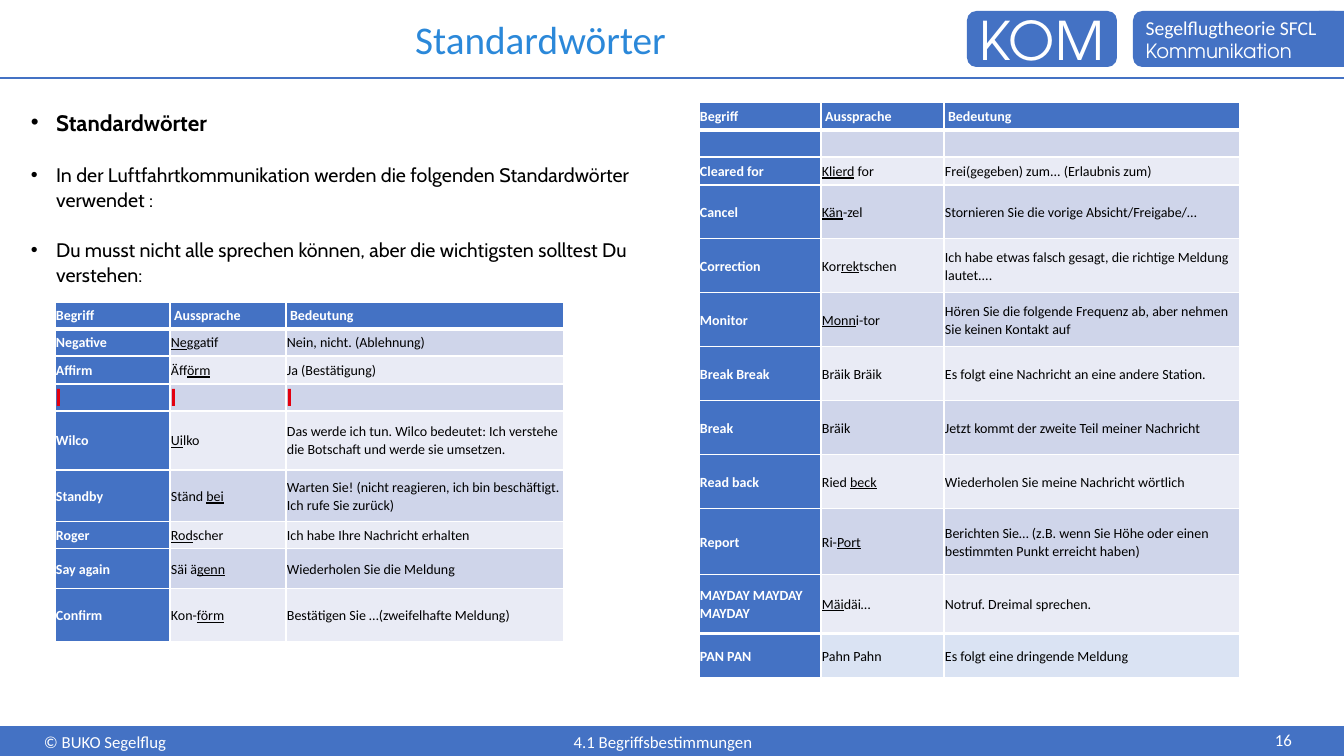
from lxml import etree
from pptx import Presentation
from pptx.dml.color import RGBColor
from pptx.enum.shapes import MSO_CONNECTOR, MSO_SHAPE as SHAPE
from pptx.enum.text import MSO_ANCHOR as ANCHOR, PP_ALIGN as ALIGN
from pptx.oxml.ns import qn
from pptx.util import Pt

PX = 914400 / 100.8
C = {"blue": "4472C4", "title": "2B88D9", "white": "FFFFFF", "black": "000000",
     "dark_band": "CFD5EA", "light_band": "E9EBF5", "pan": "DAE3F3", "red": "E3000F"}
SANS, ROUND, BODY = "Calibri", "TeX Gyre Adventor", "Cabin"

HEADER = (" Aussprache", " Bedeutung")
# Underscores enclose the stressed, underlined syllable
LEFT_ROWS = [
    (27, "Begriff", *HEADER),
    (27, "Negative", "_Ne_ggatif", "Nein, nicht. (Ablehnung)"),
    (28, "Affirm", "Äff_örm_", "Ja (Bestätigung)"),
    (27, "", "", ""),
    (59, "Wilco", "_Ui_lko", "Das werde ich tun. Wilco bedeutet: Ich verstehe die Botschaft "
                             "und werde sie umsetzen."),
    (52, "Standby", "Ständ _bei_", "Warten Sie! (nicht reagieren, ich bin beschäftigt. "
                                   "Ich rufe Sie zurück)"),
    (27, "Roger", "_Rod_scher", "Ich habe Ihre Nachricht erhalten"),
    (40, "Say again", "Säi ä_genn_", "Wiederholen Sie die Meldung"),
    (53, "Confirm", "Kon-_förm_", "Bestätigen Sie …(zweifelhafte Meldung)"),
]
RIGHT_ROWS = [
    (28, "Begriff", *HEADER),
    (27, "", "", ""),
    (28, "Cleared for", "_Klierd_ for", "Frei(gegeben) zum... (Erlaubnis zum)"),
    (54, "Cancel", "_Kän_-zel", "Stornieren Sie die vorige Absicht/Freigabe/…"),
    (54, "Correction", "Kor_rek_tschen", "Ich habe etwas falsch gesagt, die richtige "
                                         "Meldung lautet...."),
    (54, "Monitor", "_Monn_i-tor", "Hören Sie die folgende Frequenz ab, aber nehmen "
                                   "Sie keinen Kontakt auf"),
    (54, "Break Break", "Bräik Bräik", "Es folgt eine Nachricht an eine andere Station."),
    (54, "Break", "Bräik", "Jetzt kommt der zweite Teil meiner Nachricht"),
    (54, "Read back", "Ried _beck_", "Wiederholen Sie meine Nachricht wörtlich"),
    (66, "Report", "Ri-_Port_", "Berichten Sie… (z.B. wenn Sie Höhe oder einen bestimmten "
                                "Punkt erreicht haben)"),
    (58, "MAYDAY MAYDAY MAYDAY", "_Mäi_däi…", "Notruf. Dreimal sprechen."),
]
PAN_ROWS = [(45, "PAN PAN", "Pahn Pahn", "Es folgt eine dringende Meldung")]
LEFT_COLS, RIGHT_COLS = (115, 116, 278), (122, 123, 296)
POINTS = [
    ("Standardwörter", 16, True),
    ("In der Luftfahrtkommunikation werden die folgenden Standardwörter verwendet :", 14, False),
    ("Du musst nicht alle sprechen können, aber die wichtigsten solltest Du verstehen:", 14, False),
]


def px(*values):
    return [round(v * PX) for v in values]


def rgb(name):
    return RGBColor.from_string(C[name])


def style(r, size, color, font=SANS, bold=False, underline=False):
    r.font.size, r.font.name = Pt(size), font
    r.font.bold, r.font.underline = bold, underline
    r.font.color.rgb = rgb(color)


def write(p, text, size, color, font=SANS, bold=False, align=ALIGN.LEFT):
    p.text, p.alignment = text, align
    style(p.runs[0], size, color, font, bold)


def add_block(slide, kind, box, color="blue"):
    s = slide.shapes.add_shape(kind, *px(*box))
    s.shadow.inherit = False
    s.fill.solid()
    s.fill.fore_color.rgb = rgb(color)
    s.line.fill.background()
    return s


def add_badge(slide, box, lines, align):
    tf = add_block(slide, SHAPE.ROUNDED_RECTANGLE, box).text_frame
    tf.vertical_anchor, tf.word_wrap = ANCHOR.MIDDLE, True
    for i, (text, size, font) in enumerate(lines):
        p = tf.add_paragraph() if i else tf.paragraphs[0]
        write(p, text, size, "white", font, align=align)


def add_rule(slide, y):
    s = slide.shapes.add_connector(MSO_CONNECTOR.STRAIGHT, *px(0, y, 1344, y))
    s.line.color.rgb, s.line.width = rgb("blue"), Pt(1.25)
    etree.SubElement(s._element.spPr, qn("a:effectLst"))


def add_text(slide, box):
    tf = slide.shapes.add_textbox(*px(*box)).text_frame
    tf.word_wrap = True
    return tf


def add_points(slide, box):
    tf = add_text(slide, box)
    for i, (text, size, bold) in enumerate(POINTS):
        p = tf.add_paragraph() if i else tf.paragraphs[0]
        pPr = p._p.get_or_add_pPr()
        pPr.set("marL", "228600")
        pPr.set("indent", "-228600")
        etree.SubElement(pPr, qn("a:buFont")).set("typeface", "Arial")
        etree.SubElement(pPr, qn("a:buChar")).set("char", "•")
        write(p, text, size, "black", BODY, bold)
        p.line_spacing, p.space_after = 1.07, Pt(8)
        p.space_before = Pt(10 if i else 0)


def set_borders(cell, top, bottom):
    tcPr = cell._tc.get_or_add_tcPr()
    for side, width in (("L", 1), ("R", 1), ("T", top), ("B", bottom)):
        ln = etree.SubElement(tcPr, qn("a:ln" + side), w=str(Pt(width)))
        fill = etree.SubElement(ln, qn("a:solidFill"))
        etree.SubElement(fill, qn("a:srgbClr")).set("val", C["white"])


def fill_cell(cell, text, fill, white_text):
    cell.fill.solid()
    cell.fill.fore_color.rgb = rgb(fill)
    cell.vertical_anchor = ANCHOR.MIDDLE
    cell.margin_left = cell.margin_right = cell.margin_top = cell.margin_bottom = px(1)[0]
    p = cell.text_frame.paragraphs[0]
    p.line_spacing, p.space_after = 1.07, Pt(8)
    for i, part in enumerate(text.split("_")):
        if part:
            r = p.add_run()
            r.text = part
            style(r, 10, "white" if white_text else "black", bold=white_text, underline=i % 2 == 1)
    if not text:
        p._p.get_or_add_endParaRPr().set("sz", "1000")


def add_terms(slide, x, y, cols, rows, has_header=True, bands=("light_band", "dark_band")):
    height = sum(row[0] for row in rows)
    frame = slide.shapes.add_table(len(rows), len(cols), *px(x, y, sum(cols), height))
    table = frame.table
    table.first_row = table.horz_banding = False
    for col, width in zip(table.columns, px(*cols)):
        col.width = width
    for i, (row_height, *texts) in enumerate(rows):
        table.rows[i].height = px(row_height)[0]
        for j, text in enumerate(texts):
            cell = table.cell(i, j)
            strong = j == 0 or (has_header and i == 0)
            set_borders(cell, 3 if has_header and i == 1 else 1,
                        3 if i == 0 else 1)
            fill_cell(cell, text, "blue" if strong else bands[i % 2], strong)


def main():
    prs = Presentation()
    prs.slide_width, prs.slide_height = px(1344, 756)
    slide = prs.slides.add_slide(prs.slide_layouts[5])

    # Title
    title = slide.shapes.title
    title.left, title.top, title.width, title.height = px(105, 14, 871, 55)
    tf = title.text_frame
    tf.vertical_anchor = ANCHOR.MIDDLE
    write(tf.paragraphs[0], "Standardwörter", 28, "title", align=ALIGN.CENTER)
    tf.paragraphs[0].line_spacing = 0.9

    # Header badges and rules
    add_badge(slide, (967, 11, 150, 56), [("KOM", 38, ROUND)], ALIGN.CENTER)
    add_badge(slide, (1133, 11, 211, 56),
              [("Segelflugtheorie SFCL", 14, SANS), ("Kommunikation", 14, ROUND)], ALIGN.LEFT)
    add_block(slide, SHAPE.RECTANGLE, (1319, 11, 25, 56))
    add_rule(slide, 78)

    # Footer
    add_block(slide, SHAPE.RECTANGLE, (0, 727, 1344, 29))
    add_rule(slide, 727)
    for box, text, align in (
            ((34, 727, 143, 29), "© BUKO Segelflug", ALIGN.LEFT),
            ((167, 727, 992, 29), "4.1 Begriffsbestimmungen", ALIGN.CENTER),
            ((1265, 725, 59, 31), "16", ALIGN.LEFT)):
        write(add_text(slide, box).paragraphs[0], text, 12, "white", align=align)

    # Introduction and term tables
    add_points(slide, (21, 102, 643, 190))
    add_terms(slide, 55, 302, LEFT_COLS, LEFT_ROWS)
    add_terms(slide, 699, 102, RIGHT_COLS, RIGHT_ROWS)
    add_terms(slide, 699, 634, RIGHT_COLS, PAN_ROWS, has_header=False, bands=("pan", "pan"))

    # Red marks in the empty row
    for i in range(len(LEFT_COLS)):
        add_block(slide, SHAPE.RECTANGLE, (57 + sum(LEFT_COLS[:i]), 389, 3, 17), "red")

    prs.save("out.pptx")


if __name__ == "__main__":
    main()
